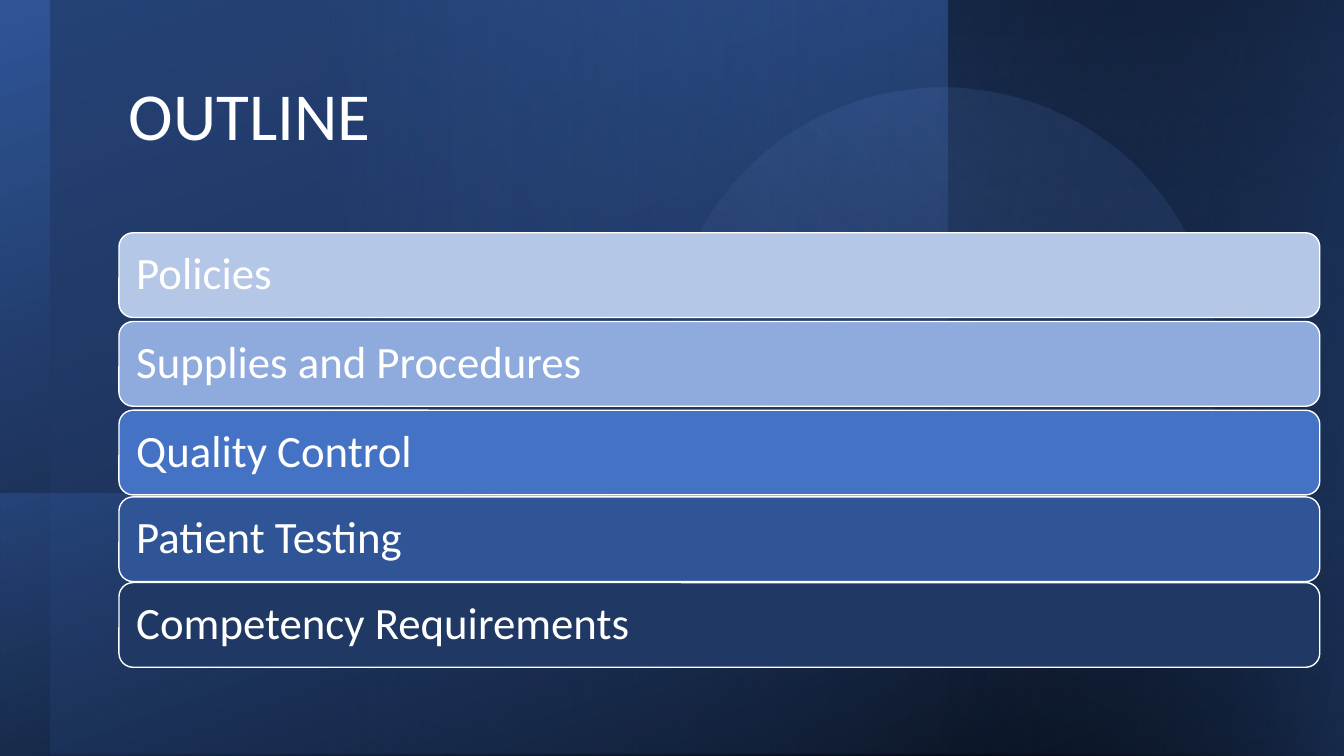
from lxml import etree
from pptx import Presentation
from pptx.dml.color import RGBColor
from pptx.enum.shapes import MSO_SHAPE
from pptx.enum.text import MSO_ANCHOR, PP_ALIGN
from pptx.oxml.ns import qn
from pptx.util import Inches, Pt

RECT, OVAL = MSO_SHAPE.RECTANGLE, MSO_SHAPE.OVAL
ROUND = MSO_SHAPE.ROUNDED_RECTANGLE
MIDDLE, BOTTOM = MSO_ANCHOR.MIDDLE, MSO_ANCHOR.BOTTOM
LEFT = PP_ALIGN.LEFT

WHITE = RGBColor(0xFF, 0xFF, 0xFF)
BLACK = RGBColor(0x00, 0x00, 0x00)
NAVY = RGBColor(0x20, 0x38, 0x64)
DEEP = RGBColor(0x2F, 0x55, 0x97)
BLUE = RGBColor(0x44, 0x72, 0xC4)
SOFT = RGBColor(0x8F, 0xAA, 0xDC)
PALE = RGBColor(0xB4, 0xC7, 0xE7)
DUSK = RGBColor(0x2A, 0x4B, 0x86)
MID = RGBColor(0x4A, 0x76, 0xC6)
FONT = "Calibri"

# Content
TITLE = "OUTLINE"
TOPICS = [  # text, top, fill
    ("Policies", 2.31, PALE),
    ("Supplies and Procedures", 3.19, SOFT),
    ("Quality Control", 4.07, BLUE),
    ("Patient Testing", 4.93, DEEP),
    ("Competency Requirements", 5.78, NAVY),
]

# Gradient stops: position, colour, opacity (all in percent)
BASE = [(0, DUSK, 100), (48, MID, 100), (100, SOFT, 100)]
BACK = [  # kind, box, rotation, flipped, angle, stops
    (RECT, (0, 0, 13.33, 7.5), 0, False, 250,
     [(0, BLACK, 100), (100, DEEP, 100)]),
    (RECT, (0.5, 0, 12.85, 7.48), 180, True, 0,
     [(21, NAVY, 61), (100, BLUE, 0)]),
    (RECT, (9.41, 0, 3.95, 7.5), 0, False, 270,
     [(0, DEEP, 0), (99, BLACK, 41)]),
    (OVAL, (6.63, 0.85, 5.43, 5.46), 254.6, False, 240,
     [(0, BLUE, 24), (79, SOFT, 0)]),
]
FRONT = [
    (RECT, (0.01, 4.9, 13.32, 2.6), 180, True, 290,
     [(0, DEEP, 50), (99, BLACK, 34)]),
    (RECT, (7.62, 1.79, 7.5, 3.93), 270, True, 260,
     [(0, DEEP, 50), (99, BLACK, 0)]),
]


def blend(fill, props, stops, angle):
    """Swap a solid fill for a linear gradient with opacity."""
    fill.solid()
    grad = etree.Element(qn("a:gradFill"), rotWithShape="1")
    group = etree.SubElement(grad, qn("a:gsLst"))
    for pos, color, alpha in stops:
        stop = etree.SubElement(group, qn("a:gs"), pos=str(pos * 1000))
        tint = etree.SubElement(stop, qn("a:srgbClr"), val=str(color))
        if alpha < 100:
            etree.SubElement(tint, qn("a:alpha"), val=str(alpha * 1000))
    etree.SubElement(grad, qn("a:lin"), ang=str(angle * 60000), scaled="0")
    props.replace(props.find(qn("a:solidFill")), grad)


def add_shape(kind, box):
    shape = slide.shapes.add_shape(kind, *map(Inches, box))
    shape.shadow.inherit = False
    return shape


def add_panel(kind, box, turn, flip, angle, stops):
    panel = add_shape(kind, box)
    panel.rotation = turn
    if flip:
        panel.element.spPr.find(qn("a:xfrm")).set("flipH", "1")
    blend(panel.fill, panel.element.spPr, stops, angle)
    panel.line.fill.background()


def write(frame, text, size, anchor):
    frame.word_wrap = True
    frame.vertical_anchor = anchor
    para = frame.paragraphs[0]
    para.alignment = LEFT
    para.line_spacing = 0.9
    run = para.add_run()
    run.text = text
    run.font.name = FONT
    run.font.size = Pt(size)
    run.font.color.rgb = WHITE


prs = Presentation()
prs.slide_width, prs.slide_height = Inches(13.33), Inches(7.5)
slide = prs.slides.add_slide(prs.slide_layouts[6])

# Background and panels behind the title
ground = slide.background.fill
ground.solid()
blend(ground, slide.element.find(".//" + qn("p:bgPr")), BASE, 270)
for panel in BACK:
    add_panel(*panel)

# Title
title = slide.shapes.add_textbox(*map(Inches, (1.18, 0.68, 2.68, 0.91)))
write(title.text_frame, TITLE, 48, BOTTOM)

# Panels over the backdrop
for panel in FRONT:
    add_panel(*panel)

# Topic bars
for text, top, color in TOPICS:
    bar = add_shape(ROUND, (1.18, top, 11.91, 0.84))
    bar.fill.solid()
    bar.fill.fore_color.rgb = color
    bar.line.color.rgb = WHITE
    bar.line.width = Pt(1)
    frame = bar.text_frame
    frame.margin_left = frame.margin_right = Inches(0.13)
    frame.margin_top = frame.margin_bottom = Inches(0.13)
    write(frame, text, 32, MIDDLE)

prs.save("out.pptx")
